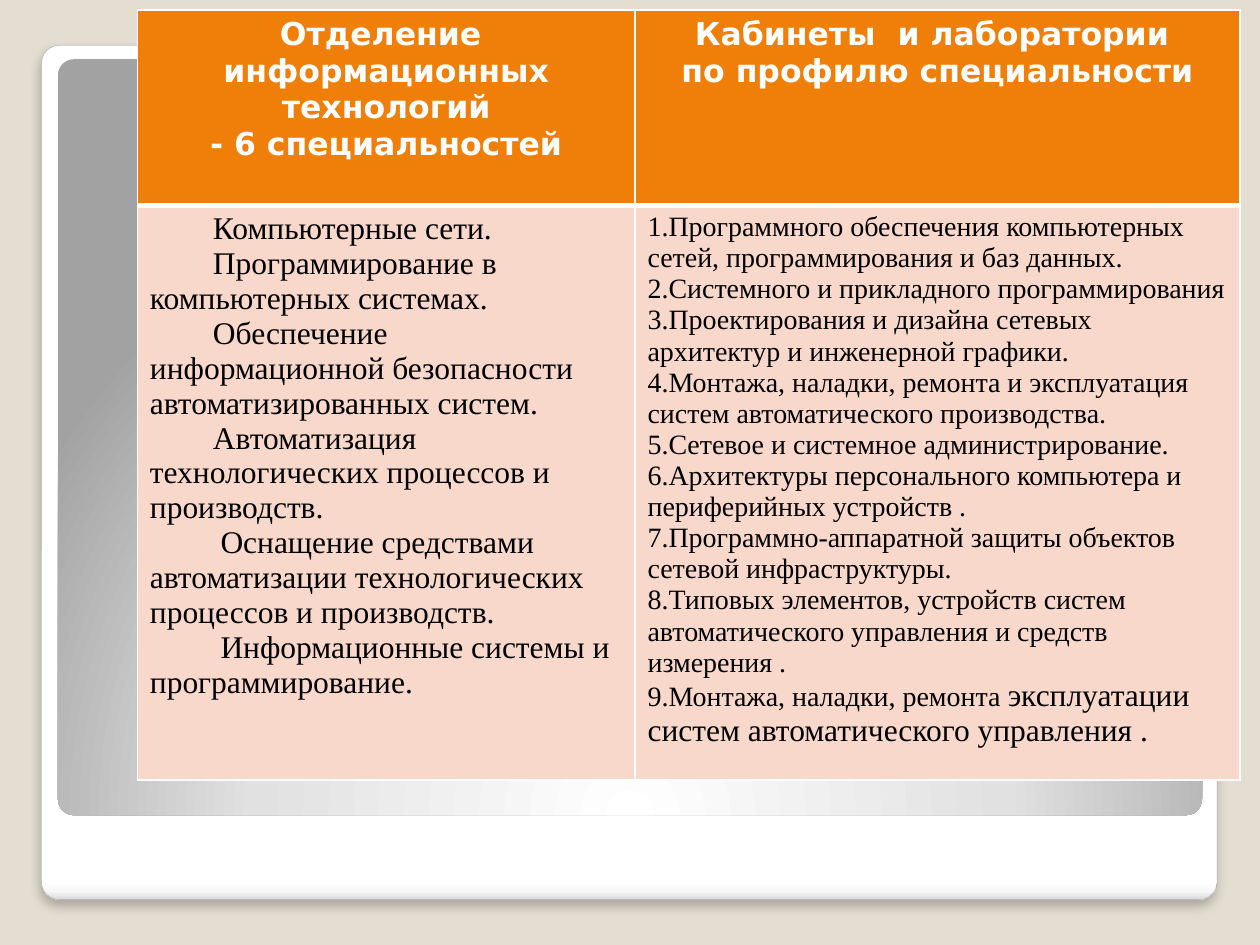
from lxml import etree
from pptx import Presentation
from pptx.dml.color import RGBColor
from pptx.enum.shapes import MSO_SHAPE as Shape
from pptx.enum.text import PP_ALIGN as Align
from pptx.oxml import parse_xml
from pptx.oxml.ns import nsdecls, qn
from pptx.util import Inches, Pt

HEADER_FONT = {"name": "DejaVu Sans", "size": Pt(18), "bold": True}
SPECIALTY_FONT = {"name": "Times New Roman", "size": Pt(18), "bold": False}
ROOM_FONT = {**SPECIALTY_FONT, "size": Pt(16)}

HEADERS = [
    ["Отделение ", "информационных технологий", "- 6 специальностей"],
    ["Кабинеты  и лаборатории ", "по профилю специальности"],
]
# Each specialty with its first-line indent in inches
SPECIALTIES = [
    ("Компьютерные сети.", 0.5),
    ("Программирование в компьютерных системах.", 0.5),
    ("Обеспечение информационной безопасности автоматизированных систем.", 0.5),
    ("Автоматизация технологических процессов и производств.", 0.5),
    ("Оснащение средствами  автоматизации технологических процессов и производств.", 0.56),
    ("Информационные системы и программирование.", 0.56),
]
ROOMS = [
    "1.Программного обеспечения компьютерных сетей, программирования и баз данных.",
    "2.Системного и прикладного программирования",
    "3.Проектирования и дизайна сетевых архитектур и инженерной графики.",
    "4.Монтажа, наладки, ремонта и эксплуатация систем автоматического производства.",
    "5.Сетевое и системное администрирование.",
    "6.Архитектуры персонального компьютера и периферийных устройств .",
    "7.Программно-аппаратной защиты объектов сетевой инфраструктуры.",
    "8.Типовых элементов, устройств систем автоматического управления и средств измерения .",
    "9.Монтажа, наладки, ремонта ",
]
LAST_ROOM_END = "эксплуатации систем автоматического управления ."


def color(value):
    return RGBColor.from_string(value)


def set_gradient(shape, stops, direction):
    shape.fill.gradient()
    gradient = shape._element.spPr.find(qn("a:gradFill"))
    marks = "".join(
        f'<a:gs pos="{position * 1000}"><a:srgbClr val="{value}"/></a:gs>'
        for position, value in stops
    )
    gradient.getparent().replace(gradient, parse_xml(
        f'<a:gradFill {nsdecls("a")} rotWithShape="1">'
        f"<a:gsLst>{marks}</a:gsLst>{direction}</a:gradFill>"
    ))


def add_panel(slide, left, top, width, height, stops, direction):
    panel = slide.shapes.add_shape(
        Shape.ROUNDED_RECTANGLE, Inches(left), Inches(top), Inches(width), Inches(height)
    )
    panel.adjustments[0] = 0.021
    panel.shadow.inherit = False
    panel.line.fill.background()
    set_gradient(panel, stops, direction)
    return panel


def add_frame(slide, left, top, width, height):
    """White card with a soft shadow and a shaded panel inside it."""
    card = add_panel(
        slide, left, top, width, height,
        [(0, "FFFFFF"), (98, "FFFFFF"), (99, "F7F7F7"), (100, "DADADA")],
        '<a:lin ang="5400000" scaled="0"/>',
    )
    card.line.color.rgb = color("A4A4A4")
    card.line.width = Pt(0.16)
    card._element.spPr.find(qn("a:effectLst")).append(parse_xml(
        f'<a:outerShdw {nsdecls("a")} blurRad="{Pt(6)}" dist="{Pt(4)}" dir="5400000">'
        '<a:srgbClr val="000000"><a:alpha val="25000"/></a:srgbClr></a:outerShdw>'
    ))
    add_panel(
        slide, left + 0.13, top + 0.11, width - 0.25, height - 0.78,
        [(0, "FFFFFF"), (55, "E1E1E1"), (100, "A2A2A2")],
        '<a:path path="circle"><a:fillToRect l="50000" t="175000" r="50000" b="-75000"/></a:path>',
    )


def style_cell(cell, fill, borders):
    properties = cell._tc.get_or_add_tcPr()
    for side, width in borders.items():
        line = etree.SubElement(properties, qn(f"a:ln{side}"), w=str(Pt(width)))
        solid = etree.SubElement(line, qn("a:solidFill"))
        etree.SubElement(solid, qn("a:srgbClr"), val="FFFFFF")
    cell.fill.solid()
    cell.fill.fore_color.rgb = color(fill)


def add_run(paragraph, text, font, font_color):
    run = paragraph.add_run()
    run.text = text
    for name, value in font.items():
        setattr(run.font, name, value)
    run.font.color.rgb = color(font_color)


def write_cell(cell, lines, font, font_color, align=Align.LEFT):
    """Write (text, first-line indent) pairs, one paragraph each."""
    frame = cell.text_frame
    for index, (text, indent) in enumerate(lines):
        paragraph = frame.add_paragraph() if index else frame.paragraphs[0]
        paragraph.alignment = align
        if indent:
            properties = paragraph._p.get_or_add_pPr()
            properties.set("marL", "0")
            properties.set("indent", str(Inches(indent)))
        add_run(paragraph, text, font, font_color)


def add_department_table(slide, left, top, widths, heights):
    table = slide.shapes.add_table(
        len(heights), len(widths), Inches(left), Inches(top),
        Inches(sum(widths)), Inches(sum(heights)),
    ).table
    for column, width in zip(table.columns, widths):
        column.width = Inches(width)
    for row, height in zip(table.rows, heights):
        row.height = Inches(height)

    for column, lines in enumerate(HEADERS):
        header, body = table.cell(0, column), table.cell(1, column)
        style_cell(header, "F07F09", {"L": 1, "R": 1, "T": 1, "B": 3})
        style_cell(body, "F9D8CC", {"L": 1, "R": 1, "T": 3, "B": 1})
        write_cell(header, [(line, 0) for line in lines], HEADER_FONT, "FFFFFF", Align.CENTER)

    rooms = table.cell(1, 1)
    write_cell(table.cell(1, 0), SPECIALTIES, SPECIALTY_FONT, "000000")
    write_cell(rooms, [(room, 0) for room in ROOMS], ROOM_FONT, "000000")
    add_run(rooms.text_frame.paragraphs[-1], LAST_ROOM_END, SPECIALTY_FONT, "000000")


def main():
    presentation = Presentation()
    presentation.slide_width, presentation.slide_height = Inches(10), Inches(7.5)
    slide = presentation.slides.add_slide(presentation.slide_layouts[6])
    slide.background.fill.solid()
    slide.background.fill.fore_color.rgb = color("E3DED1")
    add_frame(slide, 0.33, 0.36, 9.33, 6.78)
    add_department_table(slide, 1.09, 0.08, widths=[3.95, 4.8], heights=[1.55, 4.56])
    presentation.save("out.pptx")


if __name__ == "__main__":
    main()
